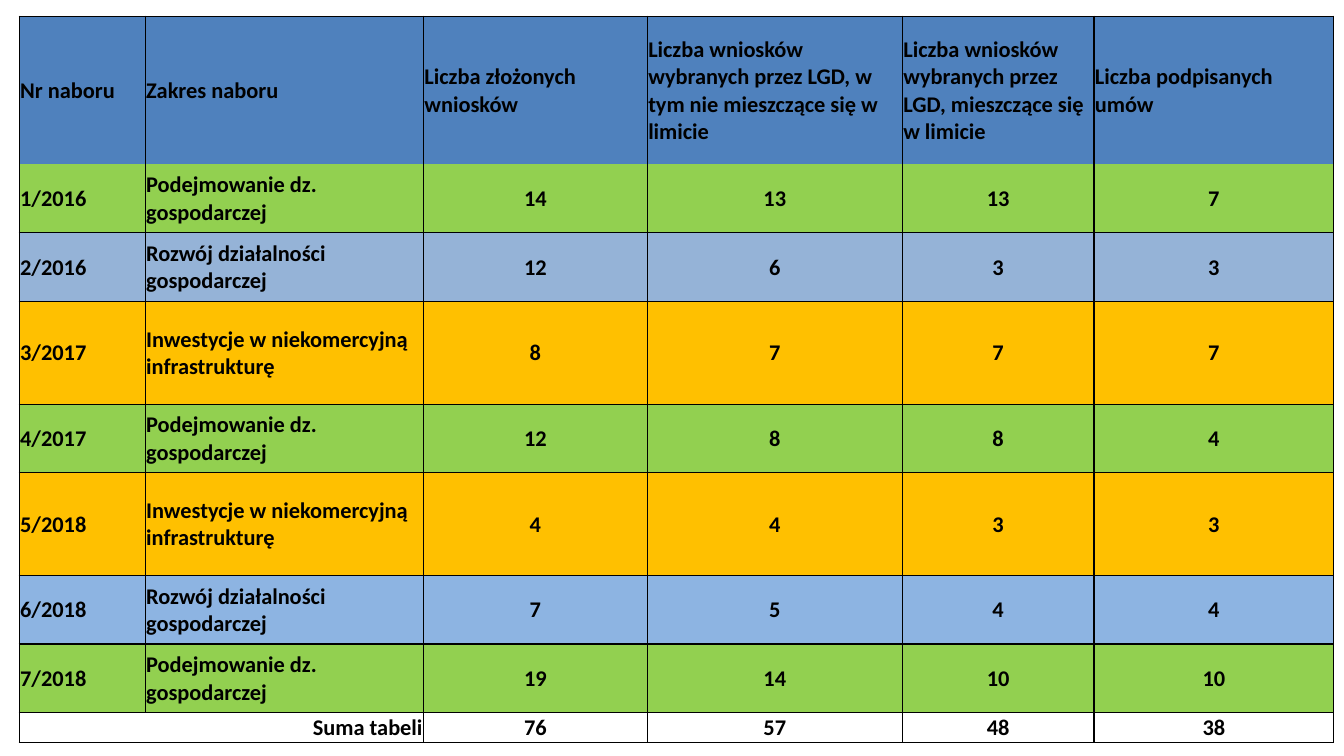
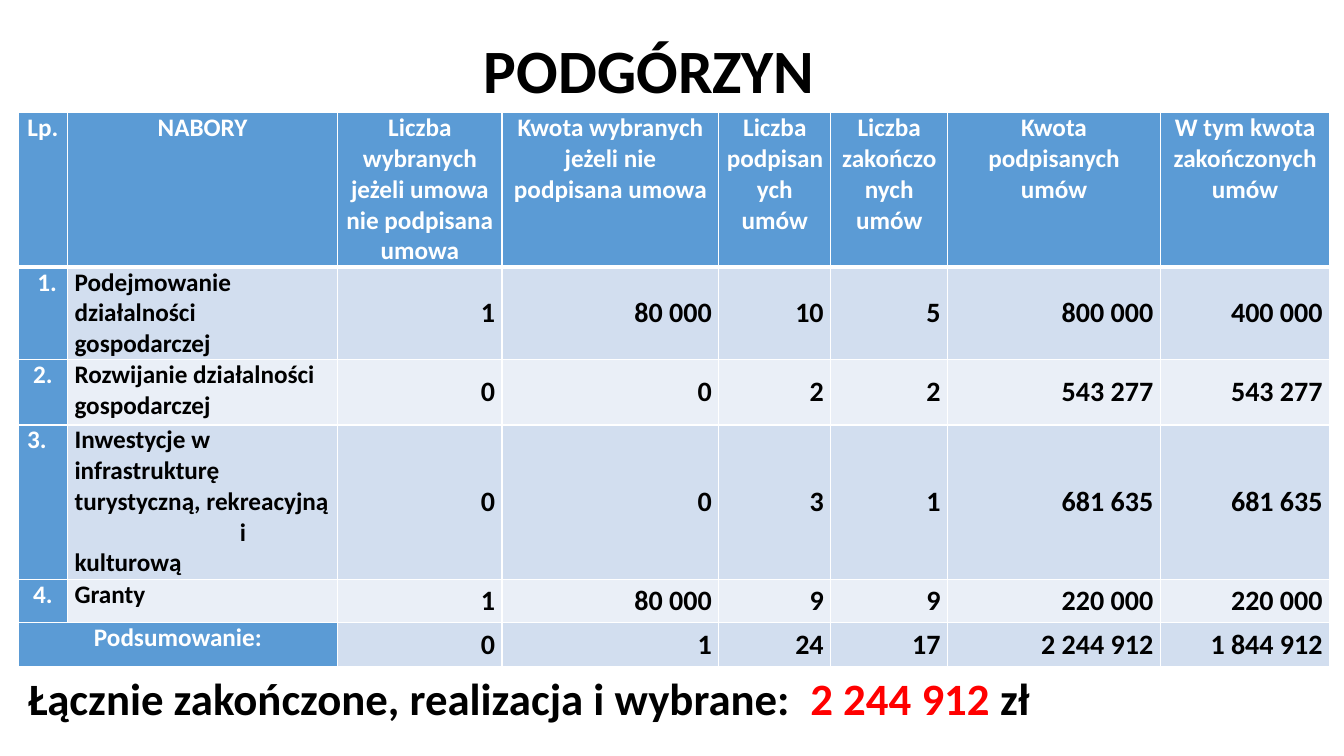
import pptx
import pptx.util
import pptx.dml.color
import pptx.enum.text
import pptx.oxml.ns
import lxml.etree

Inches = pptx.util.Inches
Pt = pptx.util.Pt
ALIGN = pptx.enum.text.PP_ALIGN
ANCHOR = pptx.enum.text.MSO_ANCHOR
FONT = "Calibri"
COLOURS = {
    "black": "000000", "white": "FFFFFF", "red": "FF0000",
    "steel": "4F81BD", "green": "92D050", "grey_blue": "95B3D7",
    "sky": "8DB4E2", "amber": "FFC000",
    "blue": "5B9BD5", "pale": "D2DEEF", "paler": "EAEFF7",
}

# Content: calls for applications
START, GROW, INVEST = (
    "Podejmowanie dz. gospodarczej",
    "Rozwój działalności gospodarczej",
    "Inwestycje w niekomercyjną infrastrukturę",
)
CALL_HEADINGS = [
    "Nr naboru", "Zakres naboru", "Liczba złożonych wniosków",
    "Liczba wniosków wybranych przez LGD, w tym nie mieszczące się w limicie",
    "Liczba wniosków wybranych przez LGD, mieszczące się w limicie",
    "Liczba podpisanych umów",
]
CALLS = [
    ("green", ["1/2016", START, 14, 13, 13, 7]),
    ("grey_blue", ["2/2016", GROW, 12, 6, 3, 3]),
    ("amber", ["3/2017", INVEST, 8, 7, 7, 7]),
    ("green", ["4/2017", START, 12, 8, 8, 4]),
    ("amber", ["5/2018", INVEST, 4, 4, 3, 3]),
    ("sky", ["6/2018", GROW, 7, 5, 4, 4]),
    ("green", ["7/2018", START, 19, 14, 10, 10]),
    (None, ["Suma tabeli", "", 76, 57, 48, 38]),
]
CALL_COLUMNS = [1.25, 2.76, 2.22, 2.53, 1.9, 2.38]
CALL_ROWS = [1.47, 0.68, 0.68, 1.02, 0.68, 1.02, 0.68, 0.68, 0.3]

# Content: one municipality
TOWN = "PODGÓRZYN"
TOWN_HEADINGS = [
    "Lp.", "NABORY", "Liczba wybranych jeżeli umowa nie podpisana umowa",
    "Kwota wybranych jeżeli nie podpisana umowa", "Liczba podpisanych umów",
    "Liczba zakończonych umów", "Kwota podpisanych umów",
    "W tym kwota zakończonych umów",
]
TOWN_ROWS = [
    ["1.", "Podejmowanie działalności gospodarczej",
     "1", "80 000", "10", "5", "800 000", "400 000"],
    ["2.", "Rozwijanie działalności gospodarczej",
     "0", "0", "2", "2", "543 277", "543 277"],
    ["3.", "Inwestycje w infrastrukturę turystyczną, rekreacyjną\ni kulturową",
     "0", "0", "3", "1", "681 635", "681 635"],
    ["4.", "Granty", "1", "80 000", "9", "9", "220 000", "220 000"],
    ["Podsumowanie:", "", "0", "1", "24", "17", "2 244 912", "1 844 912"],
]
TOWN_COLUMNS = [0.49, 2.68, 1.63, 2.15, 1.11, 1.16, 2.11, 1.68]
TOWN_HEIGHTS = [1.53, 0.91, 0.65, 1.53, 0.43, 0.44]
NUMBER_INDENTS = {"1.": 0.12, "3.": 0.02}
TOTAL = [("Łącznie zakończone, realizacja i wybrane:\t", "black"),
         ("2 244 912 ", "red"), ("zł", "black")]


def colour(name):
    return pptx.dml.color.RGBColor.from_string(COLOURS[name])


def add_span(para, text, size, ink):
    span = para.add_run()
    span.text = text
    span.font.name = FONT
    span.font.size = Pt(size)
    span.font.bold = True
    span.font.color.rgb = colour(ink)


def indent(para, left=0, first=0):
    properties = para._p.get_or_add_pPr()
    properties.set("marL", str(Inches(left)))
    properties.set("indent", str(Inches(first)))


def border(cell, ink, widths):
    """Widths run left, right, top, bottom; zero means no line."""
    properties = cell._tc.get_or_add_tcPr()
    name = pptx.oxml.ns.qn
    for side, width in zip("LRTB", widths):
        line = lxml.etree.SubElement(properties, name("a:ln" + side))
        line.set("w", str(Pt(width)))
        if width:
            fill = lxml.etree.SubElement(line, name("a:solidFill"))
            lxml.etree.SubElement(fill, name("a:srgbClr")).set("val", COLOURS[ink])
        else:
            lxml.etree.SubElement(line, name("a:noFill"))


def add_grid(page, left, top, columns, heights):
    frame = page.shapes.add_table(len(heights), len(columns), Inches(left), Inches(top),
                                  Inches(sum(columns)), Inches(sum(heights)))
    grid = frame.table
    grid.horz_banding = False
    grid.first_row = False
    for column, width in zip(grid.columns, columns):
        column.width = Inches(width)
    for row, height in zip(grid.rows, heights):
        row.height = Inches(height)
    last = len(heights) - 1
    grid.cell(last, 0).merge(grid.cell(last, 1))
    return grid


def fill_cell(cell, text, size, ink, align, anchor, insets, fill):
    cell.margin_left, cell.margin_right, cell.margin_top, cell.margin_bottom = map(Inches, insets)
    cell.vertical_anchor = anchor
    if fill:
        cell.fill.solid()
        cell.fill.fore_color.rgb = colour(fill)
    else:
        cell.fill.background()
    frame = cell.text_frame
    for number, line in enumerate(str(text).split("\n")):
        para = frame.add_paragraph() if number else frame.paragraphs[0]
        para.alignment = align
        if line:
            add_span(para, line, size, ink)


def build_calls(deck):
    page = deck.slides.add_slide(deck.slide_layouts[6])
    grid = add_grid(page, 0.19, 0.16, CALL_COLUMNS, CALL_ROWS)
    rows = [("steel", CALL_HEADINGS)] + CALLS
    for r, (fill, values) in enumerate(rows):
        for c, value in enumerate(values):
            cell = grid.cell(r, c)
            # No rule between the headings and the first call
            border(cell, "black", (1, 1, 0 if r == 1 else 1, 0 if r == 0 else 1))
            align = ALIGN.CENTER if r and c > 1 else ALIGN.LEFT
            if fill is None and c == 0:
                align = ALIGN.RIGHT
            fill_cell(cell, value, 16, "black", align, ANCHOR.MIDDLE,
                      (0.01, 0.01, 0.01, 0), fill)


def build_town(deck):
    page = deck.slides.add_slide(deck.slide_layouts[5])

    # Title
    title = page.shapes.title
    title.left, title.top, title.width, title.height = map(Inches, (0.69, 0, 11.5, 1.45))
    title.text_frame.vertical_anchor = ANCHOR.MIDDLE
    para = title.text_frame.paragraphs[0]
    para.alignment = ALIGN.CENTER
    para.line_spacing = 0.9
    add_span(para, TOWN, 44, "black")

    # Table
    grid = add_grid(page, 0.18, 1.12, TOWN_COLUMNS, TOWN_HEIGHTS)
    for r, values in enumerate([TOWN_HEADINGS] + TOWN_ROWS):
        band = "pale" if r % 2 else "paler"
        for c, value in enumerate(values):
            cell = grid.cell(r, c)
            border(cell, "white", (1, 1, 3 if r == 1 else 1, 3 if r == 0 else 1))
            if r == 0 or c == 0:
                style = 18, "white", ALIGN.CENTER, ANCHOR.TOP
            elif c == 1:
                style = 18, "black", ALIGN.LEFT, ANCHOR.TOP
            else:
                style = 20, "black", ALIGN.RIGHT, ANCHOR.MIDDLE
            fill_cell(cell, value, *style, (0.07, 0.07, 0, 0),
                      "blue" if r == 0 or c == 0 else band)
            paras = cell.text_frame.paragraphs
            if value in NUMBER_INDENTS and c == 0:
                paras[0].alignment = ALIGN.LEFT
                indent(paras[0], left=NUMBER_INDENTS[value])
            for para in paras[1:]:
                indent(para, first=1.64)

    # Grand total
    box = page.shapes.add_textbox(Inches(0.18), Inches(6.6), Inches(10.6), Inches(0.64))
    box.text_frame.word_wrap = True
    para = box.text_frame.paragraphs[0]
    tabs = lxml.etree.SubElement(para._p.get_or_add_pPr(), pptx.oxml.ns.qn("a:tabLst"))
    stop = lxml.etree.SubElement(tabs, pptx.oxml.ns.qn("a:tab"))
    stop.set("pos", str(Inches(7.76)))
    stop.set("algn", "l")
    for text, ink in TOTAL:
        add_span(para, text, 32, ink)


def main():
    deck = pptx.Presentation()
    deck.slide_width = Inches(13.33)
    deck.slide_height = Inches(7.5)
    build_calls(deck)
    build_town(deck)
    deck.save("out.pptx")


if __name__ == "__main__":
    main()
